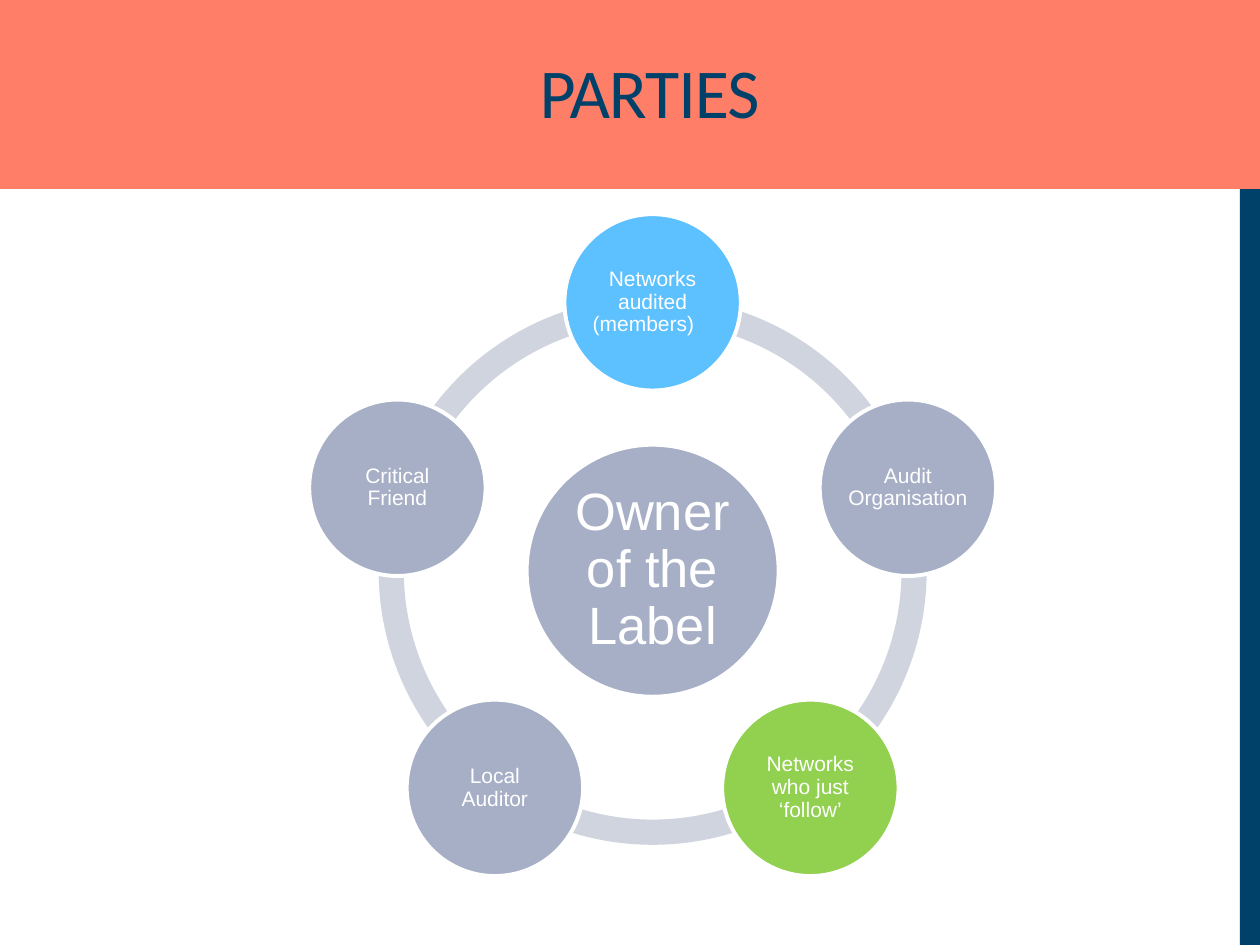
"""Build a slide showing the parties arranged on a ring around the label owner."""
import math

import pptx
import pptx.dml.color
import pptx.enum.shapes
import pptx.enum.text
import pptx.util

TITLE = "PARTIES"
HUB = "Owner of the Label"
PARTIES = [
    ("Networks audited (members)\t", "member"),
    ("Audit Organisation", "party"),
    ("Networks who just ‘follow’", "follower"),
    ("Local Auditor", "party"),
    ("Critical Friend", "party"),
]
THEME = {
    "banner": "FF7E67", "navy": "00416A", "white": "FFFFFF", "ring": "D0D4DF",
    "party": "A7AFC6", "member": "5DC0FF", "follower": "92D050",
    "title_font": "Calibri", "body_font": "Arial",
    "title_size": 40, "hub_size": 30, "party_size": 12, "outline": 2.25,
}
WIDTH, HEIGHT = 10, 7.5
BANNER_HEIGHT = HEIGHT / 5
STRIP_WIDTH = 0.16
CENTER_X, CENTER_Y = 5.18, 4.53
RING_SIZE, RING_THICKNESS, ORBIT = 4.35, 0.046, 2.13
HUB_SIZE, PARTY_SIZE = 2, 1.4
SHAPES = pptx.enum.shapes.MSO_SHAPE
ANCHORS = pptx.enum.text.MSO_ANCHOR


def color(name):
    return pptx.dml.color.RGBColor.from_string(THEME[name])


def add_shape(page, kind, left, top, width, height, fill):
    shape = page.shapes.add_shape(kind, *map(pptx.util.Inches, (left, top, width, height)))
    shape.shadow.inherit = False
    shape.fill.solid()
    shape.fill.fore_color.rgb = color(fill)
    shape.line.fill.background()
    return shape


def write(shape, text, font, size, ink, inset, anchor):
    frame = shape.text_frame
    frame.word_wrap = True
    frame.vertical_anchor = anchor
    frame.margin_left = frame.margin_right = pptx.util.Inches(inset)
    frame.margin_top = frame.margin_bottom = pptx.util.Inches(inset)
    para = frame.paragraphs[0]
    para.alignment = pptx.enum.text.PP_ALIGN.CENTER
    para.font.name = THEME[font]
    para.font.size = pptx.util.Pt(THEME[size])
    para.font.color.rgb = color(ink)
    span = para.add_run()
    span.text = text
    return para, span


def add_circle(page, x, y, diameter, fill, text, size, inset):
    circle = add_shape(page, SHAPES.OVAL, x - diameter / 2, y - diameter / 2,
                       diameter, diameter, fill)
    circle.line.color.rgb = color("white")
    circle.line.width = pptx.util.Pt(THEME["outline"])
    para, _ = write(circle, text, "body_font", size, "white", inset, ANCHORS.MIDDLE)
    para.line_spacing = 0.9


def add_ring(page, step):
    for index in range(len(PARTIES)):
        start = (270 + index * step) % 360
        arc = add_shape(page, SHAPES.BLOCK_ARC, CENTER_X - RING_SIZE / 2,
                        CENTER_Y - RING_SIZE / 2, RING_SIZE, RING_SIZE, "ring")
        arc.adjustments[0] = start * 0.6
        arc.adjustments[1] = (start + step) % 360 * 0.6
        arc.adjustments[2] = RING_THICKNESS


def main():
    deck = pptx.Presentation()
    deck.slide_width = pptx.util.Inches(WIDTH)
    deck.slide_height = pptx.util.Inches(HEIGHT)
    page = deck.slides.add_slide(deck.slide_layouts[6])

    add_shape(page, SHAPES.RECTANGLE, WIDTH - STRIP_WIDTH, BANNER_HEIGHT,
              STRIP_WIDTH, HEIGHT - BANNER_HEIGHT, "navy")
    add_shape(page, SHAPES.RECTANGLE, 0, 0, WIDTH, BANNER_HEIGHT, "banner")
    box = page.shapes.add_textbox(*map(pptx.util.Inches, (1.85, 0.39, 6.61, 0.71)))
    _, span = write(box, TITLE, "title_font", "title_size", "navy", 0.05, ANCHORS.BOTTOM)
    span.font._element.set("spc", "-60")

    step = 360 / len(PARTIES)
    add_ring(page, step)
    add_circle(page, CENTER_X, CENTER_Y, HUB_SIZE, "party", HUB, "hub_size", 0.04)
    for index, (text, fill) in enumerate(PARTIES):
        angle = math.radians(index * step - 90)
        add_circle(page, CENTER_X + ORBIT * math.cos(angle),
                   CENTER_Y + ORBIT * math.sin(angle),
                   PARTY_SIZE, fill, text, "party_size", 0.02)
    deck.save("out.pptx")


if __name__ == "__main__":
    main()
